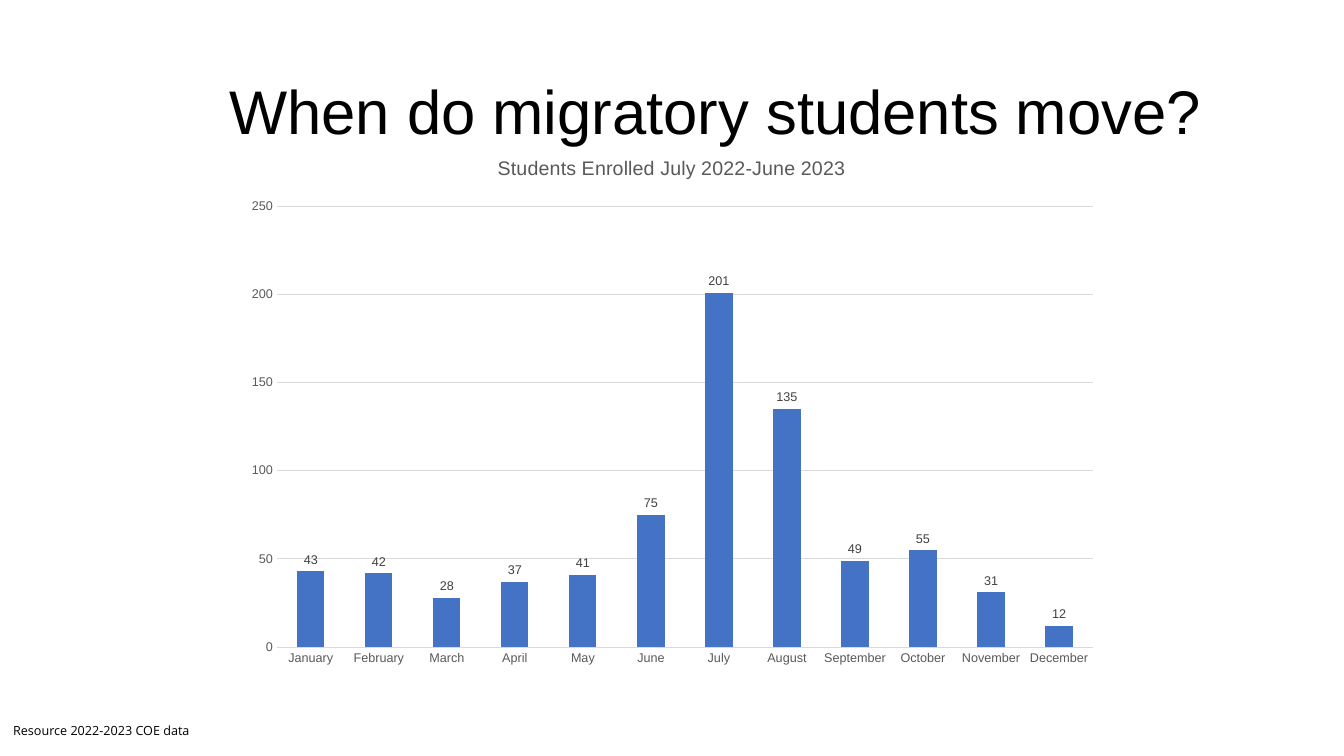
from dataclasses import dataclass

from lxml import etree
from pptx import Presentation
from pptx.chart.data import CategoryChartData
from pptx.dml.color import RGBColor
from pptx.enum.chart import XL_CHART_TYPE, XL_LABEL_POSITION, XL_TICK_MARK
from pptx.enum.text import MSO_ANCHOR, PP_ALIGN
from pptx.oxml.ns import qn
from pptx.util import Cm, Pt

COLUMNS = XL_CHART_TYPE.COLUMN_CLUSTERED
ABOVE_BAR = XL_LABEL_POSITION.OUTSIDE_END
NO_TICK = XL_TICK_MARK.NONE
TOP, BOTTOM = MSO_ANCHOR.TOP, MSO_ANCHOR.BOTTOM
LEFT, CENTER = PP_ALIGN.LEFT, PP_ALIGN.CENTER


@dataclass(frozen=True)
class Theme:
    heading_font: str = "Arial"
    source_font: str = "Open Sans"
    ink: str = "000000"
    muted: str = "595959"
    label: str = "404040"
    grid: str = "D9D9D9"
    bar: str = "4472C4"
    heading_size: float = 44
    chart_title_size: float = 14
    chart_size: float = 10
    small_size: float = 9


THEME = Theme()

ENROLLMENT = {
    "January": 43, "February": 42, "March": 28, "April": 37,
    "May": 41, "June": 75, "July": 201, "August": 135,
    "September": 49, "October": 55, "November": 31, "December": 12,
}
PLOT_AREA = {"x": 0.05, "y": 0.13, "w": 0.93, "h": 0.82}


def apply_format(target, values):
    for attribute, value in values.items():
        setattr(target, attribute, value)


def style_font(font, name, size, color):
    apply_format(font, {"name": name, "size": Pt(size), "bold": False})
    font.color.rgb = RGBColor.from_string(color)


def add_text(slide, box, text, font, frame_format, paragraph_format):
    frame = slide.shapes.add_textbox(*map(Cm, box)).text_frame
    apply_format(frame, {"word_wrap": True, **frame_format})
    paragraph = frame.paragraphs[0]
    apply_format(paragraph, paragraph_format)
    run = paragraph.add_run()
    run.text = text
    style_font(run.font, *font)


def style_axis(axis):
    apply_format(axis, {"major_tick_mark": NO_TICK, "minor_tick_mark": NO_TICK})
    axis.format.line.fill.background()
    style_font(axis.tick_labels.font, THEME.heading_font, THEME.small_size, THEME.muted)


def place_plot(chart):
    plot_area = chart.plots[0]._element.getparent()
    layout = plot_area.find(qn("c:layout"))
    if layout is None:
        layout = etree.Element(qn("c:layout"))
        plot_area.insert(0, layout)
    manual = etree.SubElement(layout, qn("c:manualLayout"))
    settings = {"layoutTarget": "inner", "xMode": "edge", "yMode": "edge", **PLOT_AREA}
    for tag, value in settings.items():
        etree.SubElement(manual, qn(f"c:{tag}")).set("val", str(value))


def add_enrollment_chart(slide, box, title):
    data = CategoryChartData()
    data.categories = list(ENROLLMENT)
    data.add_series("Series 1", list(ENROLLMENT.values()))
    chart = slide.shapes.add_chart(COLUMNS, *map(Cm, box), data).chart
    apply_format(chart, {"has_legend": False, "has_title": True})
    style_font(chart.font, THEME.heading_font, THEME.chart_size, THEME.ink)

    heading = chart.chart_title.text_frame.paragraphs[0].add_run()
    heading.text = title
    style_font(heading.font, THEME.heading_font, THEME.chart_title_size, THEME.muted)

    style_axis(chart.category_axis)
    style_axis(chart.value_axis)
    apply_format(chart.value_axis, {
        "minimum_scale": 0, "maximum_scale": 250, "major_unit": 50,
        "has_major_gridlines": True,
    })
    grid_line = chart.value_axis.major_gridlines.format.line
    grid_line.width = Pt(0.75)
    grid_line.color.rgb = RGBColor.from_string(THEME.grid)

    months = chart.plots[0]
    apply_format(months, {
        "gap_width": 150, "vary_by_categories": False, "has_data_labels": True,
    })
    bar_fill = months.series[0].format.fill
    bar_fill.solid()
    bar_fill.fore_color.rgb = RGBColor.from_string(THEME.bar)
    apply_format(months.data_labels, {"show_value": True, "position": ABOVE_BAR})
    style_font(months.data_labels.font, THEME.heading_font, THEME.small_size, THEME.label)
    place_plot(chart)


def main():
    deck = Presentation()
    apply_format(deck, {"slide_width": Cm(33.87), "slide_height": Cm(19.05)})
    slide = deck.slides.add_slide(deck.slide_layouts[6])
    add_text(
        slide, (4.83, 1.24, 26.42, 2.59), "When do migratory students move?",
        (THEME.heading_font, THEME.heading_size, THEME.ink),
        {"vertical_anchor": BOTTOM}, {"alignment": CENTER, "line_spacing": 0.85},
    )
    add_text(
        slide, (0, 18.03, 15.49, 0.89), "Resource 2022-2023 COE data",
        (THEME.source_font, THEME.small_size, THEME.ink),
        {"vertical_anchor": TOP, "margin_left": Cm(0.33),
         "margin_top": Cm(0.25), "margin_bottom": Cm(0.25)},
        {"alignment": LEFT},
    )
    add_enrollment_chart(
        slide, (5.87, 3.43, 22.12, 13.56), "Students Enrolled July 2022-June 2023"
    )
    deck.save("out.pptx")


if __name__ == "__main__":
    main()
